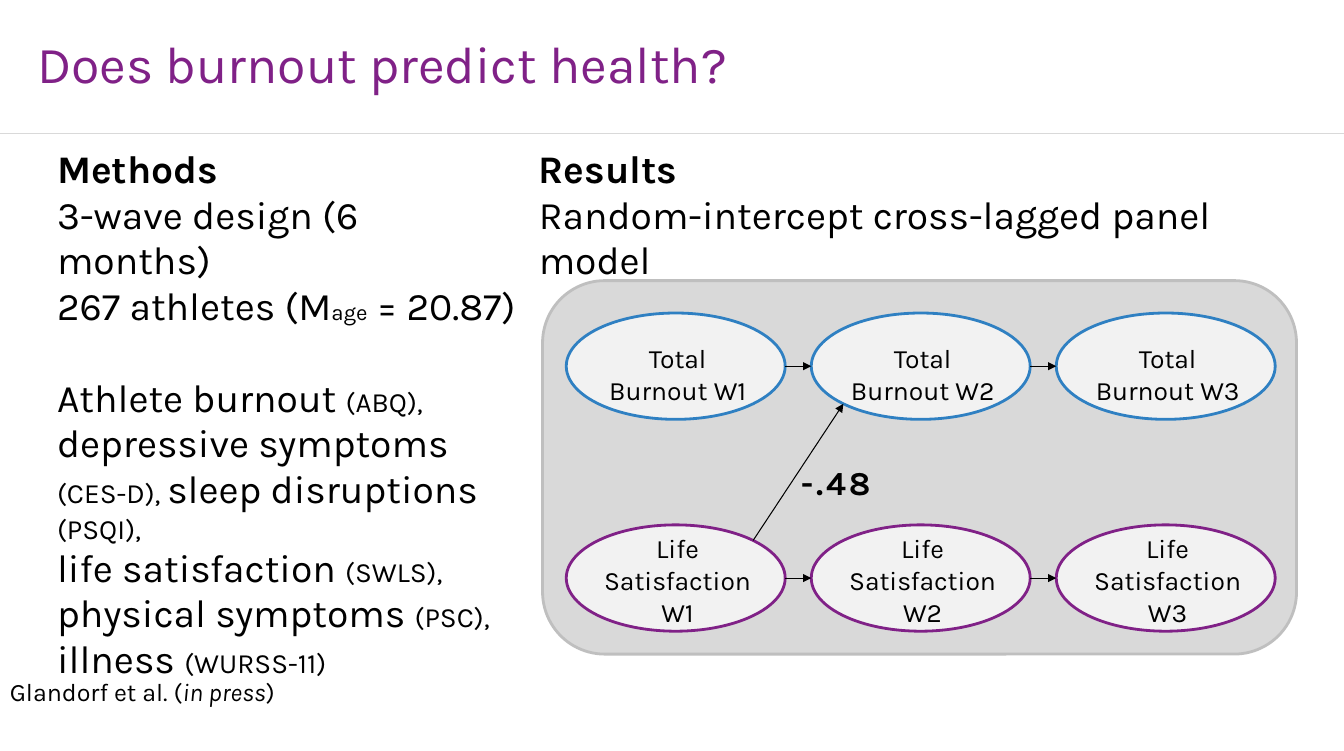
"""Build the slide on burnout as a predictor of athlete health."""
from dataclasses import dataclass, field

from lxml.etree import SubElement
from pptx import Presentation
from pptx.dml.color import RGBColor
from pptx.enum.shapes import MSO_CONNECTOR, MSO_SHAPE
from pptx.enum.text import MSO_ANCHOR, PP_ALIGN
from pptx.oxml.ns import qn
from pptx.util import Cm, Pt

FONT = "Karla"
PURPLE, BLUE, BLACK = "802187", "2F80C2", "000000"
PANEL_FILL, PANEL_EDGE, NODE_FILL = "D9D9D9", "BFBFBF", "F2F2F2"
NODE_LEFT, NODE_STEP, NODE_WIDTH, NODE_HEIGHT = 14.33, 6.2, 5.54, 2.69
WAVES = 3
DIAGONAL = 0.5 ** 0.5


@dataclass
class Span:
    """A stretch of text with its own format."""
    text: str
    size: float = 28
    bold: bool = False
    italic: bool = False
    color: str = BLACK
    tracking: float = 0


@dataclass
class Line:
    """A paragraph made of spans."""
    spans: list[Span]
    format: dict = field(default_factory=dict)


@dataclass
class Box:
    """A place on the slide, in centimetres."""
    left: float
    top: float
    width: float
    height: float

    def lengths(self) -> tuple:
        """Return the four lengths for python-pptx."""
        return Cm(self.left), Cm(self.top), Cm(self.width), Cm(self.height)

    def point(self, x: float, y: float) -> tuple[float, float]:
        """Return a point given in half-widths and half-heights from the centre."""
        return (self.left + self.width * (1 + x) / 2,
                self.top + self.height * (1 + y) / 2)


@dataclass
class Construct:
    """A measured construct, drawn as one row of nodes."""
    name: str
    color: str
    top: float
    label_left: float
    label_top: float
    label_width: float
    label_height: float
    inset: bool

    def node(self, wave: int) -> Box:
        """Return the place of the node for a wave counted from zero."""
        return Box(NODE_LEFT + wave * NODE_STEP, self.top, NODE_WIDTH, NODE_HEIGHT)


BURNOUT = Construct("Total Burnout", BLUE, 7.92, 0.66, 8.53, 4.32, 1.88, True)
SATISFACTION = Construct("Life Satisfaction", PURPLE, 13.28, 0.72, 13.46, 4.19, 2.4, False)

METHODS = [
    Line([Span("Methods", bold=True)]),
    Line([Span("3-wave design (6 months)")]),
    Line([Span("267 athletes (M"), Span("age", 16), Span(" = 20.87)")]),
    Line([Span("Athlete burnout "), Span("(ABQ), ", 20),
          Span("depressive symptoms "), Span("(CES-D), ", 20),
          Span("sleep disruptions "), Span("(PSQI),", 20)], {"space_before": Pt(33)}),
    Line([Span("life satisfaction "), Span("(SWLS), ", 20),
          Span("physical symptoms "), Span("(PSC), ", 20),
          Span("illness "), Span("(WURSS-11)", 20)]),
]
RESULTS = [
    Line([Span("Results", bold=True)]),
    Line([Span("Random-intercept cross-lagged panel model")]),
]


def rgb(color: str) -> RGBColor:
    """Turn a hex string into a colour."""
    return RGBColor.from_string(color)


def apply(target, values: dict) -> None:
    """Set each value of a format on the target."""
    for name, value in values.items():
        setattr(target, name, value)


def write(frame, lines: list[Line]) -> None:
    """Fill a text frame with lines."""
    for index, line in enumerate(lines):
        paragraph = frame.paragraphs[0] if index == 0 else frame.add_paragraph()
        apply(paragraph, line.format)
        for span in line.spans:
            run = paragraph.add_run()
            run.text = span.text
            apply(run.font, {"name": FONT, "size": Pt(span.size),
                             "bold": span.bold, "italic": span.italic})
            run.font.color.rgb = rgb(span.color)
            if span.tracking:
                run.font._element.set("spc", str(int(span.tracking * 100)))


def add_text(slide, box: Box, line: Line, inset: bool = True,
             anchor: MSO_ANCHOR = MSO_ANCHOR.TOP) -> None:
    """Add a wrapping text box holding one line."""
    frame = slide.shapes.add_textbox(*box.lengths()).text_frame
    apply(frame, {"word_wrap": True, "vertical_anchor": anchor})
    if not inset:
        apply(frame, {f"margin_{side}": 0 for side in ("left", "top", "right", "bottom")})
    write(frame, [line])


def add_outlined(slide, kind: MSO_SHAPE, box: Box, fill: str, edge: str) -> None:
    """Add a filled shape with a two-point outline."""
    shape = slide.shapes.add_shape(kind, *box.lengths())
    shape.shadow.inherit = False
    shape.fill.solid()
    shape.fill.fore_color.rgb = rgb(fill)
    shape.line.color.rgb = rgb(edge)
    shape.line.width = Pt(2)


def add_line(slide, start: tuple[float, float], end: tuple[float, float],
             color: str = BLACK, width: float = 0.75, arrow: bool = True) -> None:
    """Add a straight line, with an arrowhead at its end if wanted."""
    connector = slide.shapes.add_connector(
        MSO_CONNECTOR.STRAIGHT, *(Cm(value) for value in (*start, *end)))
    connector.line.color.rgb = rgb(color)
    connector.line.width = Pt(width)
    if arrow:
        SubElement(connector.line._get_or_add_ln(), qn("a:tailEnd"), type="triangle")
    SubElement(connector._element.spPr, qn("a:effectLst"))


def add_columns(slide) -> None:
    """Add the table with methods and results."""
    table = slide.shapes.add_table(1, 2, Cm(1.19), Cm(3.61), Cm(31.85), Cm(12.62)).table
    apply(table, {"first_row": False, "horz_banding": False})
    for column, width, lines in zip(table.columns, (12.19, 19.66), (METHODS, RESULTS)):
        column.width = Cm(width)
    for cell, lines in zip(table.rows[0].cells, (METHODS, RESULTS)):
        cell.fill.background()
        write(cell.text_frame, lines)


def add_construct(slide, construct: Construct) -> None:
    """Add the nodes, labels and arrows of one construct."""
    for wave in range(WAVES):
        node = construct.node(wave)
        add_outlined(slide, MSO_SHAPE.OVAL, node, NODE_FILL, construct.color)
        label = Box(node.left + construct.label_left, construct.label_top,
                    construct.label_width, construct.label_height)
        add_text(slide, label, Line([Span(f"{construct.name} W{wave + 1}", 19)],
                                    {"alignment": PP_ALIGN.CENTER}), construct.inset)
        if wave:
            add_line(slide, construct.node(wave - 1).point(1, 0), node.point(-1, 0))


def main() -> None:
    """Build and save the slide."""
    deck = Presentation()
    apply(deck, {"slide_width": Cm(34.01), "slide_height": Cm(19)})
    slide = deck.slides.add_slide(deck.slide_layouts[6])
    add_line(slide, (0, 3.38), (34.01, 3.38), PANEL_FILL, 1, arrow=False)
    add_columns(slide)
    add_text(slide, Box(0.94, 0.66, 27.18, 1.85),
             Line([Span("Does burnout predict health?", 37.2, color=PURPLE)]),
             inset=False, anchor=MSO_ANCHOR.MIDDLE)
    add_outlined(slide, MSO_SHAPE.ROUNDED_RECTANGLE, Box(13.73, 7.1, 19.08, 9.45),
                 PANEL_FILL, PANEL_EDGE)
    for construct in (BURNOUT, SATISFACTION):
        add_construct(slide, construct)
    add_line(slide, SATISFACTION.node(0).point(DIAGONAL, -DIAGONAL),
             BURNOUT.node(1).point(-DIAGONAL, DIAGONAL))
    add_text(slide, Box(20.27, 11.81, 2.16, 1.09),
             Line([Span("-.48", 24, bold=True, tracking=2)], {"line_spacing": 0.9}),
             inset=False)
    add_text(slide, Box(0, 16.99, 9.32, 1.02),
             Line([Span("Glandorf et al. (", 18), Span("in press", 18, italic=True),
                   Span(")", 18)]))
    deck.save("out.pptx")


if __name__ == "__main__":
    main()
